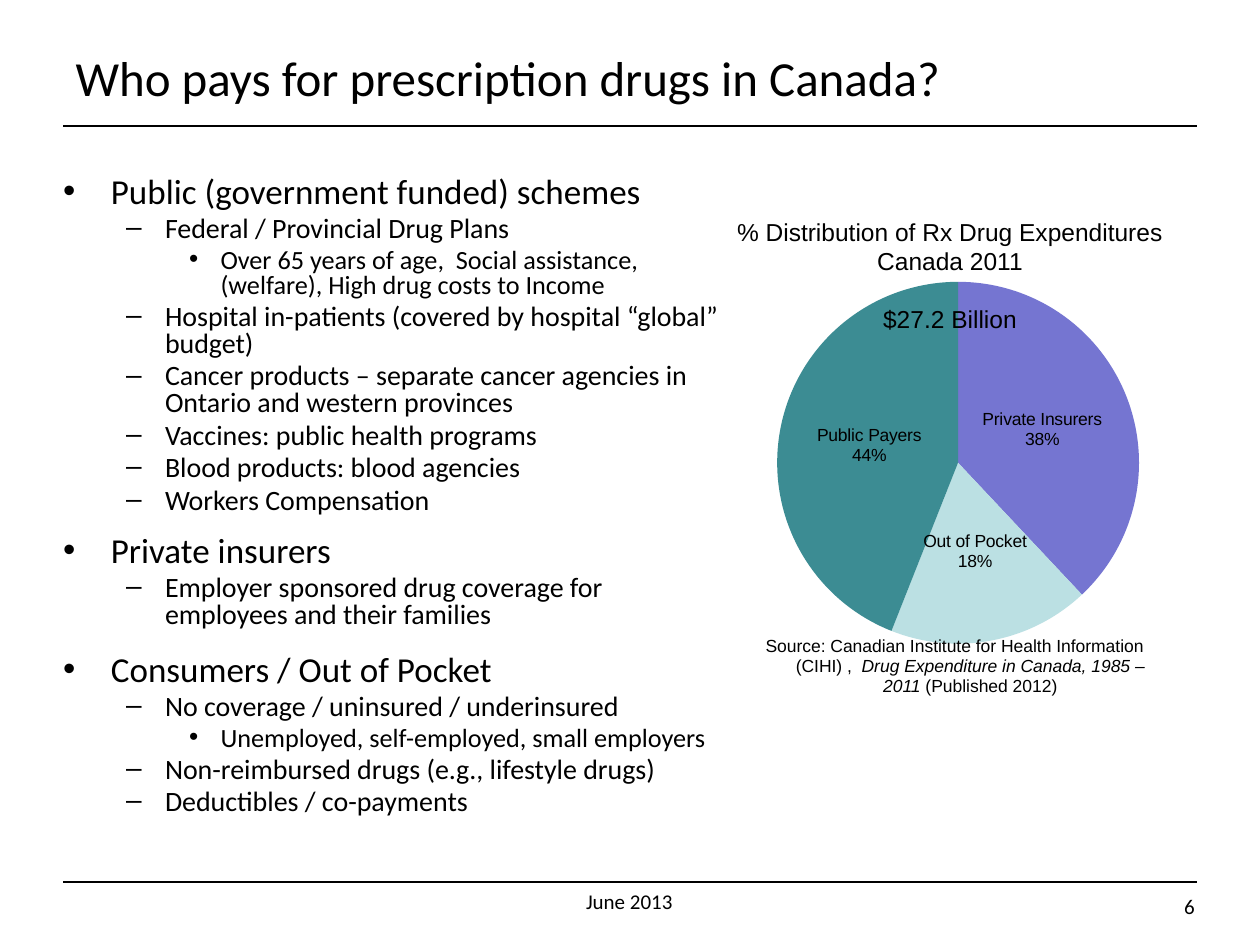
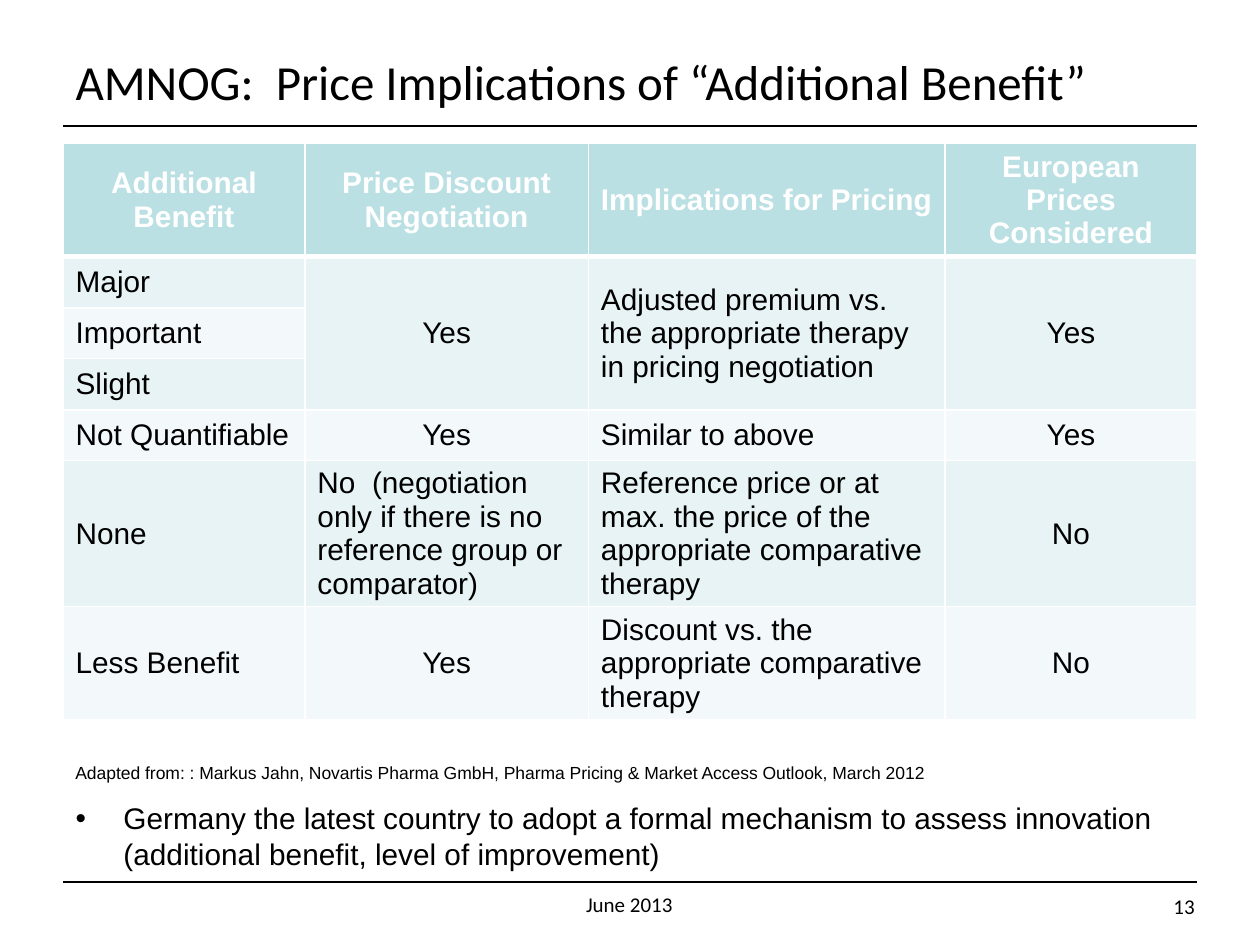
from lxml.etree import SubElement, fromstring
from pptx import Presentation
from pptx.chart.data import CategoryChartData
from pptx.dml.color import RGBColor
from pptx.enum.chart import XL_CHART_TYPE, XL_LABEL_POSITION
from pptx.enum.shapes import MSO_CONNECTOR
from pptx.enum.text import MSO_ANCHOR, MSO_AUTO_SIZE, PP_ALIGN
from pptx.oxml.ns import qn
from pptx.util import Inches, Pt

BLACK, WHITE = "000000", "FFFFFF"
VIOLET, PALE, TEAL = "7575D1", "BBE0E3", "3C8C93"
BANDS = ["E7F3F4", "F3F9FA"]
HEAD, BODY = "Calibri", "Arial"
CENTER, RIGHT, LEFT = PP_ALIGN.CENTER, PP_ALIGN.RIGHT, PP_ALIGN.LEFT
LEVELS = [(20, 0.38, 0.38, "•"), (16, 0.81, 0.31, "–"), (15, 1.25, 0.25, "•")]

PAYERS = [
    (0, "Public (government funded) schemes", 0),
    (1, "Federal / Provincial Drug Plans", 3.2),
    (2, "Over 65 years of age,  Social assistance, (welfare), High drug costs to Income", 3),
    (1, "Hospital in-patients (covered by hospital “global” budget)", 3.2),
    (1, "Cancer products – separate cancer agencies in Ontario and western provinces", 3.2),
    (1, "Vaccines: public health programs", 3.2),
    (1, "Blood products: blood agencies", 3.2),
    (1, "Workers Compensation", 3.2),
    (0, "Private insurers", 12.2),
    (1, "Employer sponsored drug coverage for employees and their families", 3.2),
    (0, "Consumers / Out of Pocket", 14.6),
    (1, "No coverage / uninsured / underinsured", 3.2),
    (2, "Unemployed, self-employed, small employers", 3),
    (1, "Non-reimbursed drugs (e.g., lifestyle drugs)", 3.2),
    (1, "Deductibles / co-payments", 3.2),
]

SHARES = [("Private Insurers", 38, VIOLET), ("Out of Pocket", 18, PALE), ("Public Payers", 44, TEAL)]

BENEFITS = [
    ["Additional Benefit", "Price Discount\nNegotiation", "Implications for Pricing",
     "European Prices Considered"],
    ["Major", "Yes", "Adjusted premium vs. the appropriate therapy in pricing negotiation", "Yes"],
    ["Important", "", "", ""],
    ["Slight", "", "", ""],
    ["Not Quantifiable", "Yes", "Similar to above", "Yes"],
    ["None", "No  (negotiation only if there is no reference group or comparator)",
     "Reference price or at max. the price of the appropriate comparative therapy", "No"],
    ["Less Benefit", "Yes", "Discount vs. the appropriate comparative therapy", "No"],
]


def paint(target, color):
    """Give a fill or line a solid hex colour."""
    target.solid()
    target.fore_color.rgb = RGBColor.from_string(color)


def write(frame, text, size=12, font=BODY, color=BLACK, bold=False, align=LEFT,
          level=0, left=0, hang=0, bullet=None, before=0, lines=None):
    """Add one paragraph; text is a string or a list of (string, italic) runs."""
    para = frame.paragraphs[0]
    if para.runs:
        para = frame.add_paragraph()
    para.alignment, para.level = align, level
    para.space_before = Pt(before)
    if lines:
        para.line_spacing = lines
    props = para._p.get_or_add_pPr()
    props.set("marL", str(Inches(left)))
    props.set("indent", str(-Inches(hang)))
    if bullet:
        SubElement(props, qn("a:buFont")).set("typeface", BODY)
        SubElement(props, qn("a:buChar")).set("char", bullet)
    for words, slant in [(text, False)] if isinstance(text, str) else text:
        run = para.add_run()
        run.text = words
        run.font.size, run.font.name = Pt(size), font
        run.font.bold, run.font.italic = bold, slant
        run.font.color.rgb = RGBColor.from_string(color)


def place(shape, box, anchor=MSO_ANCHOR.TOP):
    """Move a text shape to its box and return its frame."""
    shape.left, shape.top, shape.width, shape.height = map(Inches, box)
    frame = shape.text_frame
    frame.word_wrap, frame.auto_size = True, MSO_AUTO_SIZE.NONE
    frame.vertical_anchor = anchor
    return frame


def label(slide, box):
    """Add an empty text box and return its frame."""
    return place(slide.shapes.add_textbox(0, 0, 0, 0), box)


def base(deck, title, number, top, date):
    """Start a slide with its title, rules and footer."""
    slide = deck.slides.add_slide(deck.slide_layouts[1])
    for y in (1, 7):
        rule = slide.shapes.add_connector(
            MSO_CONNECTOR.STRAIGHT, Inches(0.5), Inches(y), Inches(9.5), Inches(y))
        paint(rule.line.fill, BLACK)
        rule.line.width = Pt(0.75)
        SubElement(rule._element.spPr, qn("a:effectLst"))
    frame = place(slide.shapes.title, (0.5, top, 9, 0.62), MSO_ANCHOR.MIDDLE)
    write(frame, title, size=28, font=HEAD)
    write(label(slide, (3.83, date, 2.33, 0.27)), "June 2013", font=HEAD, align=CENTER)
    write(label(slide, (8, 7.04, 1.58, 0.25)), number, font=HEAD, align=RIGHT)
    return slide


def outline(slide, box):
    """Fill the body with the three kinds of payer."""
    frame = place(slide.placeholders[1], box)
    for level, text, gap in PAYERS:
        size, left, hang, mark = LEVELS[level]
        write(frame, text, size=size, font=HEAD, level=level, left=left, hang=hang,
              bullet=mark, before=gap, lines=0.8)


def pie(slide, box):
    """Draw the spending shares."""
    data = CategoryChartData()
    data.categories = [name for name, _, _ in SHARES]
    data.add_series("Series 1", [share for _, share, _ in SHARES])
    chart = slide.shapes.add_chart(XL_CHART_TYPE.PIE, *map(Inches, box), data).chart
    chart.has_title = chart.has_legend = False
    chart.font.size, chart.font.name = Pt(18), BODY
    plot = chart.plots[0]
    for spot, (_, _, color) in enumerate(SHARES):
        paint(plot.series[0].points[spot].format.fill, color)
    plot.has_data_labels = True
    tags = plot.data_labels
    tags.show_category_name = tags.show_percentage = True
    tags.show_value = False
    tags.position = XL_LABEL_POSITION.CENTER
    tags.font.size, tags.font.name = Pt(10), BODY
    tags.font.color.rgb = RGBColor.from_string(BLACK)
    split = fromstring(f'<c:separator xmlns:c="{tags._element.nsmap["c"]}">\n</c:separator>')
    tags._element.find(qn("c:showBubbleSize")).addnext(split)
    area = chart._chartSpace.chart.plotArea
    for old in area.findall(qn("c:layout")):
        area.remove(old)
    layout = area.makeelement(qn("c:layout"))
    area.insert(0, layout)
    manual = SubElement(layout, qn("c:manualLayout"))
    for key, value in [("layoutTarget", "inner"), ("xMode", "edge"), ("yMode", "edge"),
                       ("x", 0.13), ("y", 0.04), ("w", 0.75), ("h", 0.81)]:
        SubElement(manual, qn(f"c:{key}")).set("val", str(value))


def edge(cell, widths):
    """Draw white borders: left, right, top, bottom."""
    props = cell._tc.get_or_add_tcPr()
    for spot, (side, width) in enumerate(zip("LRTB", widths)):
        line = props.makeelement(qn(f"a:ln{side}"), w=str(Pt(width)))
        props.insert(spot, line)
        fill = SubElement(line, qn("a:solidFill"))
        SubElement(fill, qn("a:srgbClr")).set("val", WHITE)


def grid(slide, box):
    """Build the table of benefit ratings."""
    table = slide.shapes.add_table(len(BENEFITS), 4, *map(Inches, box)).table
    table.horz_banding = False
    for col, width in zip(table.columns, (1.92, 2.25, 2.83, 2)):
        col.width = Inches(width)
    for row, height in zip(table.rows, (0.88, 0.41, 0.4, 0.41, 0.4, 1.16, 0.9)):
        row.height = Inches(height)
    for col in (1, 2, 3):
        table.cell(1, col).merge(table.cell(3, col))
    for y, row in enumerate(BENEFITS):
        for x, text in enumerate(row):
            cell = table.cell(y, x)
            cell.vertical_anchor = MSO_ANCHOR.MIDDLE
            paint(cell.fill, BANDS[(y - 1) % 2] if y else PALE)
            edge(cell, (1, 1, 3 if y == 1 else 1, 1 if y else 3))
            mid = y == 0 or text in ("Yes", "No")
            for part in text.splitlines():
                write(cell.text_frame, part, size=17, bold=y == 0,
                      color=BLACK if y else WHITE, align=CENTER if mid else LEFT)


def spending(deck):
    """Build the slide on who pays."""
    slide = base(deck, "Who pays for prescription drugs in Canada?", "6", 0.3, 7)
    outline(slide, (0.4, 1.36, 5.42, 5.29))
    pie(slide, (5.67, 2.08, 3.83, 3.58))
    source = [("Source: Canadian Institute for Health Information (CIHI) ,  ", False),
              ("Drug Expenditure in Canada, 1985 – 2011 ", True), ("(Published 2012)", False)]
    write(label(slide, (5.83, 5, 3.49, 0.58)), source, size=10, align=CENTER,
          left=0.25, hang=0.25, lines=0.95)
    frame = label(slide, (5.75, 1.67, 3.58, 1.04))
    for text, gap in [("% Distribution of Rx Drug Expenditures", 0), ("Canada 2011", 0),
                      ("$27.2 Billion", 16.5)]:
        write(frame, text, size=14, align=CENTER, before=gap)


def pricing(deck):
    """Build the slide on price implications."""
    slide = base(deck, "AMNOG:  Price Implications of “Additional Benefit”", "13", 0.33, 7.03)
    grid(slide, (0.5, 1.14, 9, 4.56))
    write(label(slide, (0.5, 6, 7.17, 0.27)),
          "Adapted from: : Markus Jahn, Novartis Pharma GmbH, "
          "Pharma Pricing & Market Access Outlook, March 2012", size=10)
    write(place(slide.placeholders[1], (0.5, 6.3, 9, 0.62)),
          "Germany the latest country to adopt a formal mechanism to assess innovation "
          "(additional benefit, level of improvement)",
          size=17, left=0.38, hang=0.38, bullet="•")


def main():
    """Build and save the deck."""
    deck = Presentation()
    deck.slide_width, deck.slide_height = Inches(10), Inches(7.5)
    spending(deck)
    pricing(deck)
    deck.save("out.pptx")


if __name__ == "__main__":
    main()
